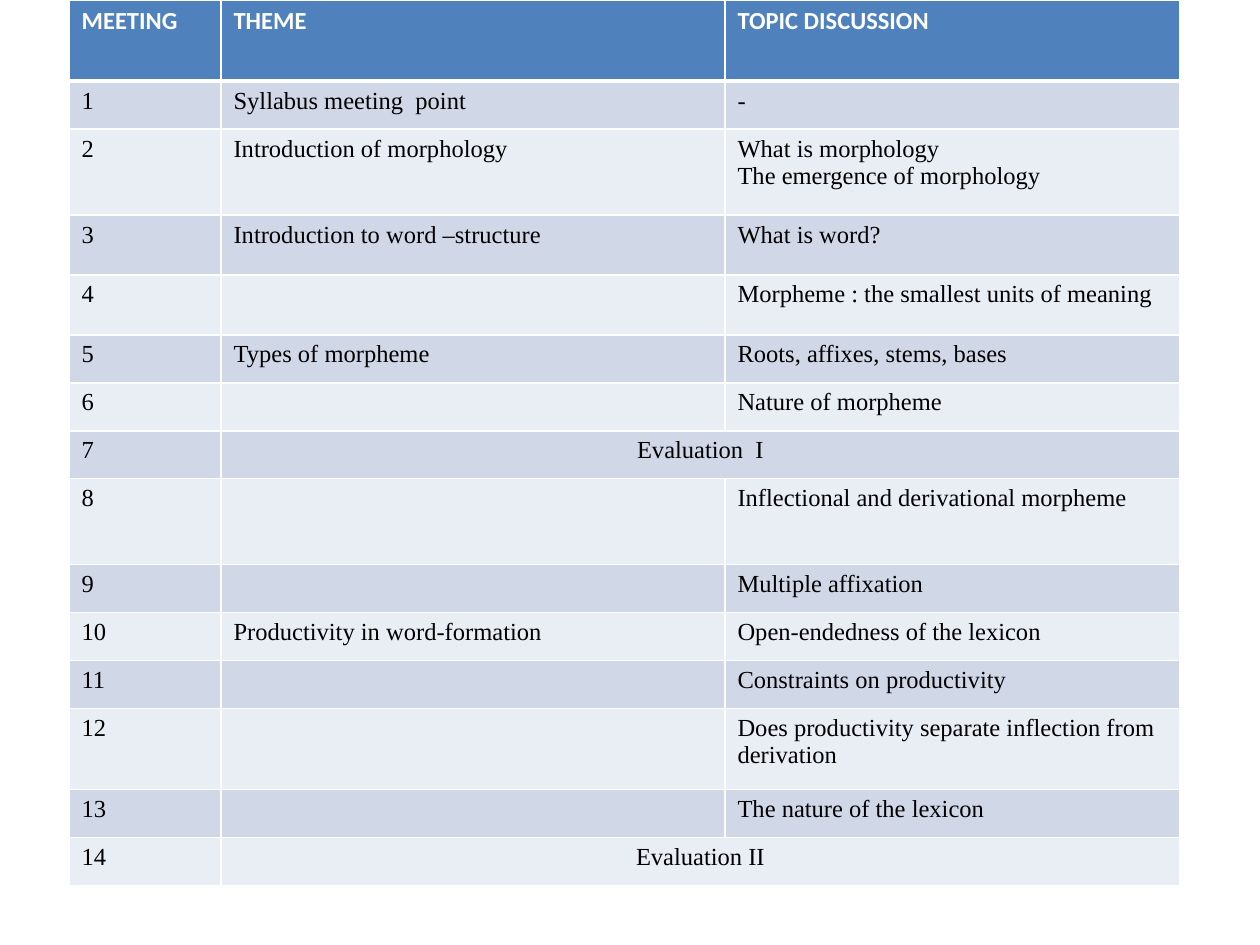
from dataclasses import dataclass

import lxml.etree
import pptx
import pptx.dml.color
import pptx.enum.text
import pptx.oxml.ns
import pptx.util

EMU_PER_PX = 914400 // 126
WHITE = pptx.dml.color.RGBColor(0xFF, 0xFF, 0xFF)
BLACK = pptx.dml.color.RGBColor(0x00, 0x00, 0x00)
HEADER_BLUE = pptx.dml.color.RGBColor(0x4F, 0x81, 0xBD)
BANDS = (
    pptx.dml.color.RGBColor(0xE9, 0xED, 0xF4),
    pptx.dml.color.RGBColor(0xD0, 0xD8, 0xE8),
)
TEXT_SIZE = pptx.util.Pt(14)
COLUMN_WIDTHS = (152, 504, 455)
HEADER_HEIGHT = 81
HEADINGS = ("MEETING", "THEME", "TOPIC DISCUSSION")


@dataclass(frozen=True)
class Meeting:
    theme: str = ""
    topic: str = ""
    height: int = 48
    is_evaluation: bool = False


MEETINGS = (
    Meeting("Syllabus meeting  point", "-"),
    Meeting("Introduction of morphology",
            "What is morphology\nThe emergence of morphology", 86),
    Meeting("Introduction to word –structure", "What is word?", 60),
    Meeting(topic="Morpheme : the smallest units of meaning", height=60),
    Meeting("Types of morpheme", "Roots, affixes, stems, bases"),
    Meeting(topic="Nature of morpheme"),
    Meeting("Evaluation  I", is_evaluation=True),
    Meeting(topic="Inflectional and derivational morpheme", height=86),
    Meeting(topic="Multiple affixation"),
    Meeting("Productivity in word-formation", "Open-endedness of the lexicon"),
    Meeting(topic="Constraints on productivity"),
    Meeting(topic="Does productivity separate inflection from derivation", height=81),
    Meeting(topic="The nature of the lexicon"),
    Meeting("Evaluation II", is_evaluation=True),
)


def px(length: int) -> pptx.util.Emu:
    return pptx.util.Emu(length * EMU_PER_PX)


def set_borders(cell, top: int, bottom: int) -> None:
    """Draw white borders; widths are in points."""
    properties = cell._tc.get_or_add_tcPr()
    qn = pptx.oxml.ns.qn
    for side, width in (("L", 1), ("R", 1), ("T", top), ("B", bottom)):
        line = lxml.etree.SubElement(
            properties, qn(f"a:ln{side}"), w=str(pptx.util.Pt(width)))
        fill = lxml.etree.SubElement(line, qn("a:solidFill"))
        lxml.etree.SubElement(fill, qn("a:srgbClr"), val=str(WHITE))


def write_cell(cell, text: str, row: int, centered: bool = False) -> None:
    is_header = row == 0
    set_borders(cell, top=3 if row == 1 else 1, bottom=3 if is_header else 1)
    cell.fill.solid()
    cell.fill.fore_color.rgb = HEADER_BLUE if is_header else BANDS[row % 2]
    for index, line in enumerate(text.split("\n")):
        frame = cell.text_frame
        paragraph = frame.add_paragraph() if index else frame.paragraphs[0]
        if centered:
            paragraph.alignment = pptx.enum.text.PP_ALIGN.CENTER
        if not line:
            # Keep an empty cell from growing its row
            lxml.etree.SubElement(
                paragraph._p, pptx.oxml.ns.qn("a:endParaRPr"),
                sz=str(int(TEXT_SIZE.pt * 100)))
            continue
        run = paragraph.add_run()
        run.text = line
        run.font.name = "Calibri" if is_header else "Times New Roman"
        run.font.size = TEXT_SIZE
        run.font.bold = is_header
        run.font.color.rgb = WHITE if is_header else BLACK


def add_schedule(slide) -> None:
    heights = [HEADER_HEIGHT] + [meeting.height for meeting in MEETINGS]
    table = slide.shapes.add_table(
        len(heights), len(COLUMN_WIDTHS), px(69), px(0),
        px(sum(COLUMN_WIDTHS)), px(sum(heights))).table
    for column, width in zip(table.columns, COLUMN_WIDTHS):
        column.width = px(width)
    for table_row, height in zip(table.rows, heights):
        table_row.height = px(height)

    # Header row
    for column, heading in enumerate(HEADINGS):
        write_cell(table.cell(0, column), heading, 0)

    # One row per meeting; evaluations span theme and topic
    for row, meeting in enumerate(MEETINGS, start=1):
        if meeting.is_evaluation:
            table.cell(row, 1).merge(table.cell(row, 2))
        write_cell(table.cell(row, 0), str(row), row)
        write_cell(table.cell(row, 1), meeting.theme, row, meeting.is_evaluation)
        write_cell(table.cell(row, 2), meeting.topic, row)


def main() -> None:
    presentation = pptx.Presentation()
    presentation.slide_width = pptx.util.Inches(10)
    presentation.slide_height = pptx.util.Inches(7.5)
    slide = presentation.slides.add_slide(presentation.slide_layouts[6])
    add_schedule(slide)
    presentation.save("out.pptx")


if __name__ == "__main__":
    main()
